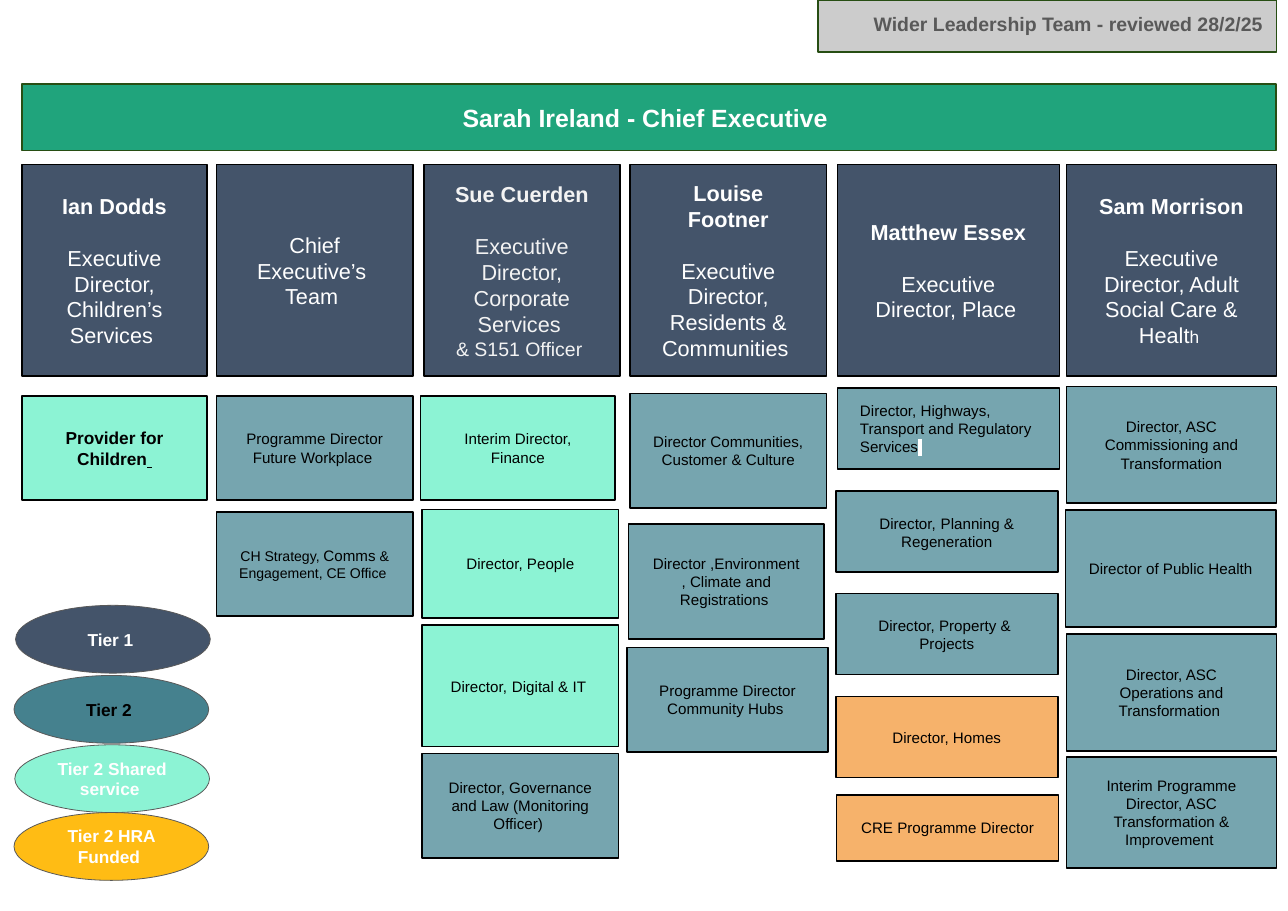
from dataclasses import dataclass

import pptx
import pptx.dml.color
import pptx.enum.shapes
import pptx.enum.text
import pptx.oxml
import pptx.oxml.ns
import pptx.util
from pptx.dml.color import RGBColor
from pptx.enum.shapes import MSO_SHAPE
from pptx.enum.text import MSO_ANCHOR, MSO_AUTO_SIZE, PP_ALIGN
from pptx.util import Inches

BLACK = RGBColor(0x00, 0x00, 0x00)
WHITE = RGBColor(0xFF, 0xFF, 0xFF)
OFF_WHITE = RGBColor(0xF3, 0xF3, 0xF3)
GREY = RGBColor(0x59, 0x59, 0x59)
SILVER = RGBColor(0xCC, 0xCC, 0xCC)
NAVY = RGBColor(0x44, 0x54, 0x6A)
STEEL = RGBColor(0x76, 0xA5, 0xAF)
TEAL = RGBColor(0x45, 0x81, 0x8E)
MINT = RGBColor(0x88, 0xF3, 0xD3)
GREEN = RGBColor(0x17, 0xA1, 0x77)
DARK_GREEN = RGBColor(0x27, 0x4E, 0x13)
ORANGE = RGBColor(0xF6, 0xB2, 0x6B)
AMBER = RGBColor(0xFF, 0xBC, 0x14)

A3_WIDTH, A3_HEIGHT = Inches(420 / 25.4), Inches(297 / 25.4)
OPACITY = {MINT: 96, GREEN: 96}
HEAD_TOP, HEAD_HEIGHT = 2.11, 2.72
NAME_GAP = 24


@dataclass
class Run:
    text: str
    size: float | None = None
    underline: bool = False
    highlight: str = ""


@dataclass
class Line:
    """One paragraph of a box."""
    runs: list[Run]
    bold: bool = False
    space_before: float = 0


@dataclass
class Style:
    fill: RGBColor
    color: RGBColor = BLACK
    size: float = 14
    outline: RGBColor = BLACK
    outline_width: float = 1.5
    inset: float = 0.29
    align: PP_ALIGN = PP_ALIGN.CENTER
    anchor: MSO_ANCHOR = MSO_ANCHOR.MIDDLE
    geometry: MSO_SHAPE = MSO_SHAPE.RECTANGLE


@dataclass
class Card:
    left: float
    top: float
    height: float
    lines: list[Line]
    fill: RGBColor = STEEL
    width: float | None = None
    size: float = 14
    align: PP_ALIGN = PP_ALIGN.CENTER


@dataclass
class Column:
    left: float
    width: float
    head: list[Line]
    cards: list[Card]
    head_color: RGBColor = WHITE


def plain(*texts: str, bold: bool = False) -> list[Line]:
    return [Line([Run(text)], bold) for text in texts]


def person(name: str, *role: Line) -> list[Line]:
    """A bold name, a gap and the role below it."""
    role[0].space_before = NAME_GAP
    return [*plain(name, bold=True), *role]


COLUMNS = [
    Column(0.28, 2.38, person("Ian Dodds", *plain("Executive", "Director, Children’s Services ")), [
        Card(0.28, 5.08, 1.34, [Line([Run("Provider for Children"), Run(" ", underline=True)], True)],
             MINT, size=16),
    ]),
    Column(2.78, 2.52, plain("Chief Executive’s ", "Team "), [
        Card(2.78, 5.08, 1.34, plain("Programme Director Future Workplace ")),
        Card(2.78, 6.57, 1.34, [Line([Run("CH Strategy, "), Run("Comms", 14),
                                      Run(" & Engagement, CE Office ")])], size=13),
    ]),
    Column(5.44, 2.52, person("Sue Cuerden",
                              Line([Run("Executive Director, Corporate Services"), Run(" ", 18)]),
                              Line([Run("& S151 Officer ", 18)])), [
        Card(5.4, 5.08, 1.34, plain("Interim Director, Finance"), MINT, 2.5),
        Card(5.42, 6.54, 1.39, plain("Director, People"), MINT),
        Card(5.42, 8.02, 1.56, [Line([Run("Director,"), Run(" ", 16), Run("Digital & IT"),
                                      Run(" ", 13)])], MINT),
        Card(5.42, 9.67, 1.34, plain("Director, Governance and Law (Monitoring Officer) ")),
    ], OFF_WHITE),
    Column(8.09, 2.52, person("Louise Footner",
                              *plain("Executive Director, Residents & Communities ")), [
        Card(8.09, 5.05, 1.47, plain("Director Communities, Customer & Culture")),
        Card(8.07, 6.73, 1.47, plain("Director ,Environment, Climate and Registrations "), width=2.51),
        Card(8.05, 8.31, 1.34, plain("Programme Director Community Hubs "), width=2.58),
    ]),
    Column(10.75, 2.85, person("Matthew Essex", Line([Run("Executive Director, Place"),
                                                      Run(" ", 16)])), [
        Card(10.75, 4.98, 1.04, [Line([Run("Director, Highways, Transport and Regulatory Services"),
                                       Run(" ", highlight="FFFFFF")])], align=PP_ALIGN.LEFT),
        Card(10.73, 6.3, 1.04, [Line([Run("Director,"), Run(" ", 16),
                                      Run("Planning & Regeneration")])]),
        Card(10.73, 7.62, 1.04, plain("Director, Property & ", "Projects")),
        Card(10.73, 8.94, 1.04, plain("Director, Homes"), ORANGE),
        Card(10.74, 10.2, 0.85, plain("CRE Programme Director "), ORANGE),
    ]),
    Column(13.69, 2.7, person("Sam Morrison",
                              Line([Run("Executive Director, Adult Social Care & Healt"),
                                    Run("h ", 16)])), [
        Card(13.69, 4.96, 1.5, plain("Director, ASC Commissioning and Transformation")),
        Card(13.68, 6.55, 1.5, plain("Director of Public Health ")),
        Card(13.69, 8.14, 1.5, plain("Director, ASC Operations and Transformation ")),
        Card(13.69, 9.72, 1.42,
             plain("Interim Programme Director, ASC Transformation & Improvement ")),
    ]),
]

LEGEND = [
    (0.2, 7.77, "Tier 1 ", NAVY, WHITE),
    (0.18, 8.67, "Tier 2 ", TEAL, BLACK),
    (0.19, 9.56, "Tier 2 Shared service ", MINT, WHITE),
    (0.18, 10.43, "Tier 2 HRA Funded ", AMBER, WHITE),
]


def write_run(paragraph, run: Run, style: Style, bold: bool) -> None:
    text_run = paragraph.add_run()
    text_run.text = run.text
    font = text_run.font
    font.name = "Arial"
    font.size = pptx.util.Pt(run.size or style.size)
    font.bold = bold
    font.color.rgb = style.color
    if run.underline:
        font.underline = True
    if run.highlight:
        namespace = pptx.oxml.ns.nsdecls("a")
        highlight = pptx.oxml.parse_xml(
            f'<a:highlight {namespace}><a:srgbClr val="{run.highlight}"/></a:highlight>')
        text_run._r.rPr.find(pptx.oxml.ns.qn("a:solidFill")).addnext(highlight)


def draw_box(slide, left: float, top: float, width: float, height: float,
             lines: list[Line], style: Style):
    shape = slide.shapes.add_shape(style.geometry, Inches(left), Inches(top),
                                   Inches(width), Inches(height))
    shape.shadow.inherit = False
    shape.fill.solid()
    shape.fill.fore_color.rgb = style.fill
    if style.fill in OPACITY:
        color = shape._element.spPr.find(".//" + pptx.oxml.ns.qn("a:srgbClr"))
        alpha = color.makeelement(pptx.oxml.ns.qn("a:alpha"), {"val": str(OPACITY[style.fill] * 1000)})
        color.append(alpha)
    shape.line.color.rgb = style.outline
    shape.line.width = pptx.util.Pt(style.outline_width)
    frame = shape.text_frame
    frame.word_wrap = True
    frame.vertical_anchor = style.anchor
    frame.margin_left = frame.margin_right = Inches(style.inset)
    frame.margin_top = frame.margin_bottom = Inches(style.inset)
    for index, line in enumerate(lines):
        paragraph = frame.add_paragraph() if index else frame.paragraphs[0]
        paragraph.alignment = style.align
        if line.space_before:
            paragraph.space_before = pptx.util.Pt(line.space_before)
        for run in line.runs:
            write_run(paragraph, run, style, line.bold)
    return shape


def draw_column(slide, column: Column) -> None:
    draw_box(slide, column.left, HEAD_TOP, column.width, HEAD_HEIGHT, column.head,
             Style(NAVY, column.head_color, 20))
    for card in column.cards:
        draw_box(slide, card.left, card.top, card.width or column.width, card.height,
                 card.lines, Style(card.fill, size=card.size, align=card.align))


def main() -> None:
    presentation = pptx.Presentation()
    presentation.slide_width, presentation.slide_height = A3_WIDTH, A3_HEIGHT
    slide = presentation.slides.add_slide(presentation.slide_layouts[6])
    review_note = draw_box(slide, 10.5, 0, 5.89, 0.67,
                           plain("Wider Leadership Team - reviewed 28/2/25", bold=True),
                           Style(SILVER, GREY, 18, DARK_GREEN, inset=0.18, align=PP_ALIGN.RIGHT,
                                 anchor=MSO_ANCHOR.TOP))
    review_note.text_frame.auto_size = MSO_AUTO_SIZE.SHAPE_TO_FIT_TEXT
    draw_box(slide, 0.28, 1.08, 16.1, 0.85, plain("Sarah Ireland - Chief Executive ", bold=True),
             Style(GREEN, WHITE, 23, DARK_GREEN))
    for column in COLUMNS:
        draw_column(slide, column)
    for left, top, label, fill, color in LEGEND:
        draw_box(slide, left, top, 2.5, 0.87, plain(label, bold=True),
                 Style(fill, color, 16, GREY, 0.75, 0.16, geometry=MSO_SHAPE.OVAL))
    presentation.save("out.pptx")


if __name__ == "__main__":
    main()
